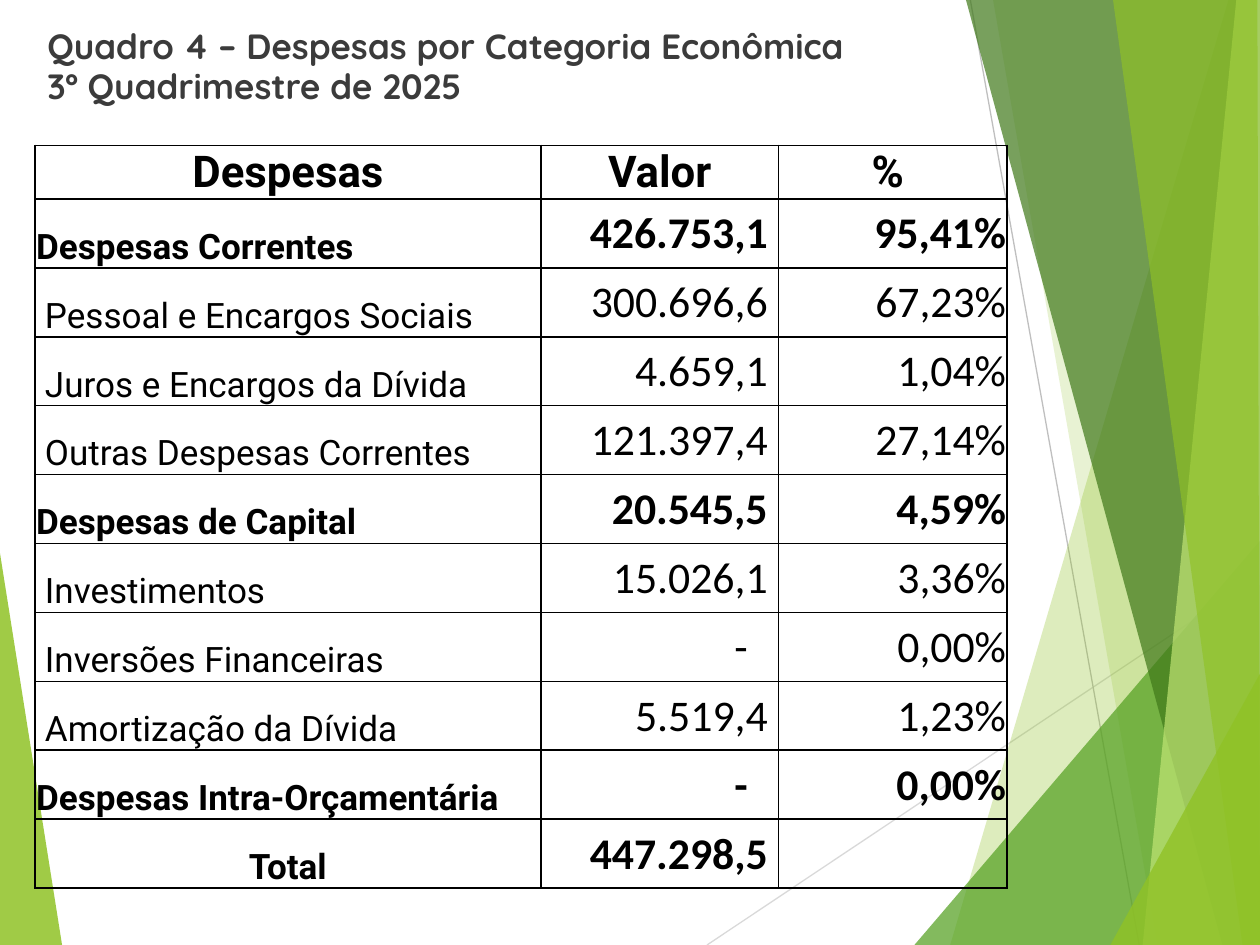
from lxml import etree
from pptx import Presentation
from pptx import util as u
from pptx.dml.color import RGBColor
from pptx.enum import shapes, text
from pptx.oxml.ns import qn

LEFT, CENTER, RIGHT = text.PP_ALIGN.LEFT, text.PP_ALIGN.CENTER, text.PP_ALIGN.RIGHT
MIDDLE, BOTTOM = text.MSO_ANCHOR.MIDDLE, text.MSO_ANCHOR.BOTTOM
W, H = 720, 540

LEFT_WEDGE = ("90C226", 85, [(0, 316), (35.5, H), (0, H)])
LINES = [("D9D9D9", (404, H), (W, 329)), ("BFBFBF", (554.5, 0), (651, H))]
FACETS = [
    ("90C226", 30, [(702, 0), (543, H), (W, H), (W, 0)]),
    ("90C226", 20, [(567.5, 0), (661.5, H), (W, H), (W, 0)]),
    ("54A021", 72, [(522.5, H), (W, 309), (W, H)]),
    ("3F7819", 70, [(552, 0), (698.5, H), (W, H), (W, 0)]),
    ("C0E474", 70, [(706.5, 0), (653, H), (W, H), (W, 0)]),
    ("90C226", 65, [(636, 0), (710, H), (W, H), (718.5, 0)]),
    ("90C226", 80, [(634.5, H), (W, 385), (W, H)]),
]
HEADER = ["Despesas", "Valor", "%"]
ROWS = [
    ("Despesas Correntes", "426.753,1", "95,41%", True),
    ("Pessoal e Encargos Sociais", "300.696,6", "67,23%", False),
    ("Juros e Encargos da Dívida", "4.659,1", "1,04%", False),
    ("Outras Despesas Correntes", "121.397,4", "27,14%", False),
    ("Despesas de Capital", "20.545,5", "4,59%", True),
    ("Investimentos", "15.026,1", "3,36%", False),
    ("Inversões Financeiras", "-", "0,00%", False),
    ("Amortização da Dívida", "5.519,4", "1,23%", False),
    ("Despesas Intra-Orçamentária", "-", "0,00%", True),
    ("Total", "447.298,5", "", True),
]


def rgb(color):
    return RGBColor.from_string(color)


class Deck:
    """Holds the style and the current slide."""

    ink, title_ink = "000000", "3B3B3B"
    label_font, number_font, title_font = "Roboto", "Calibri", "Quicksand"
    inset = 0.7

    def __init__(self, prs):
        self.s = prs.slides.add_slide(prs.slide_layouts[6])

    def facet(self, color, alpha, points):
        pts = [(u.Pt(x), u.Pt(y)) for x, y in points]
        builder = self.s.shapes.build_freeform(*pts[0])
        builder.add_line_segments(pts[1:], close=True)
        sp = builder.convert_to_shape()
        sp.shadow.inherit = False
        sp.fill.solid()
        sp.fill.fore_color.rgb = rgb(color)
        clr = sp.fill._xPr.find(".//" + qn("a:srgbClr"))
        etree.SubElement(clr, qn("a:alpha"), val=str(alpha * 1000))
        sp.line.fill.background()

    def line(self, color, start, end):
        ends = [u.Pt(v) for v in start + end]
        sp = self.s.shapes.add_connector(shapes.MSO_CONNECTOR.STRAIGHT, *ends)
        sp.line.color.rgb = rgb(color)
        sp.line.width = u.Pt(0.75)
        etree.SubElement(sp._element.spPr, qn("a:effectLst"))

    def style(self, p, font, size, color, bold):
        for r in p.runs:
            r.font.name, r.font.size, r.font.bold = font, u.Pt(size), bold
            r.font.color.rgb = rgb(color)

    def title(self, content, x, y, w, h):
        sp = self.s.shapes.add_textbox(*map(u.Pt, (x, y, w, h)))
        tf = sp.text_frame
        tf.word_wrap = True
        tf.vertical_anchor = MIDDLE
        p = tf.paragraphs[0]
        p.text = content
        p.line_spacing = 0.95
        self.style(p, self.title_font, 20, self.title_ink, True)

    def borders(self, cell):
        tcPr = cell._tc.get_or_add_tcPr()
        for side in ("lnL", "lnR", "lnT", "lnB"):
            ln = etree.SubElement(tcPr, qn("a:" + side), w=str(u.Pt(1)))
            fill = etree.SubElement(ln, qn("a:solidFill"))
            etree.SubElement(fill, qn("a:srgbClr"), val=self.ink)

    def cell(self, cell, content, font, size, bold, align, anchor=MIDDLE, left=0, right=0):
        self.borders(cell)
        cell.fill.background()
        cell.margin_left, cell.margin_right = u.Pt(self.inset + left), u.Pt(self.inset + right)
        cell.margin_top, cell.margin_bottom = u.Pt(self.inset), 0
        cell.vertical_anchor = anchor
        p = cell.text_frame.paragraphs[0]
        p.text = content
        p.alignment = align
        self.style(p, font, size, self.ink, bold)

    def table(self, x, y, widths, head_height, row_height):
        heights = [head_height] + [row_height] * len(ROWS)
        frame = self.s.shapes.add_table(len(heights), len(widths), u.Pt(x), u.Pt(y),
                                        u.Pt(sum(widths)), u.Pt(sum(heights)))
        tbl = frame.table
        tbl.first_row = tbl.horz_banding = False
        for col, width in zip(tbl.columns, widths):
            col.width = u.Pt(width)
        for row, height in zip(tbl.rows, heights):
            row.height = u.Pt(height)
        for j, name in enumerate(HEADER):
            self.cell(tbl.cell(0, j), name, self.label_font, 25, True, CENTER,
                      right=6 if name == "%" else 0)
        for i, (label, value, share, bold) in enumerate(ROWS, 1):
            self.cell(tbl.cell(i, 0), label, self.label_font, 20, bold,
                      CENTER if label == "Total" else LEFT, BOTTOM, left=0 if bold else 5)
            self.cell(tbl.cell(i, 1), value, self.number_font, 25, bold, RIGHT,
                      right=17 if value == "-" else 5.65)
            self.cell(tbl.cell(i, 2), share, self.number_font, 25, bold, RIGHT)


def main():
    prs = Presentation()
    prs.slide_width, prs.slide_height = u.Pt(W), u.Pt(H)
    deck = Deck(prs)
    deck.facet(*LEFT_WEDGE)
    for line in LINES:
        deck.line(*line)
    for facet in FACETS:
        deck.facet(*facet)
    deck.title("Quadro 4 – Despesas por Categoria Econômica\v3º Quadrimestre de 2025",
               20, 10, 612, 57)
    deck.table(20, 83, [289, 136, 130.5], 29.7, 39.4)
    prs.save("out.pptx")


if __name__ == "__main__":
    main()
